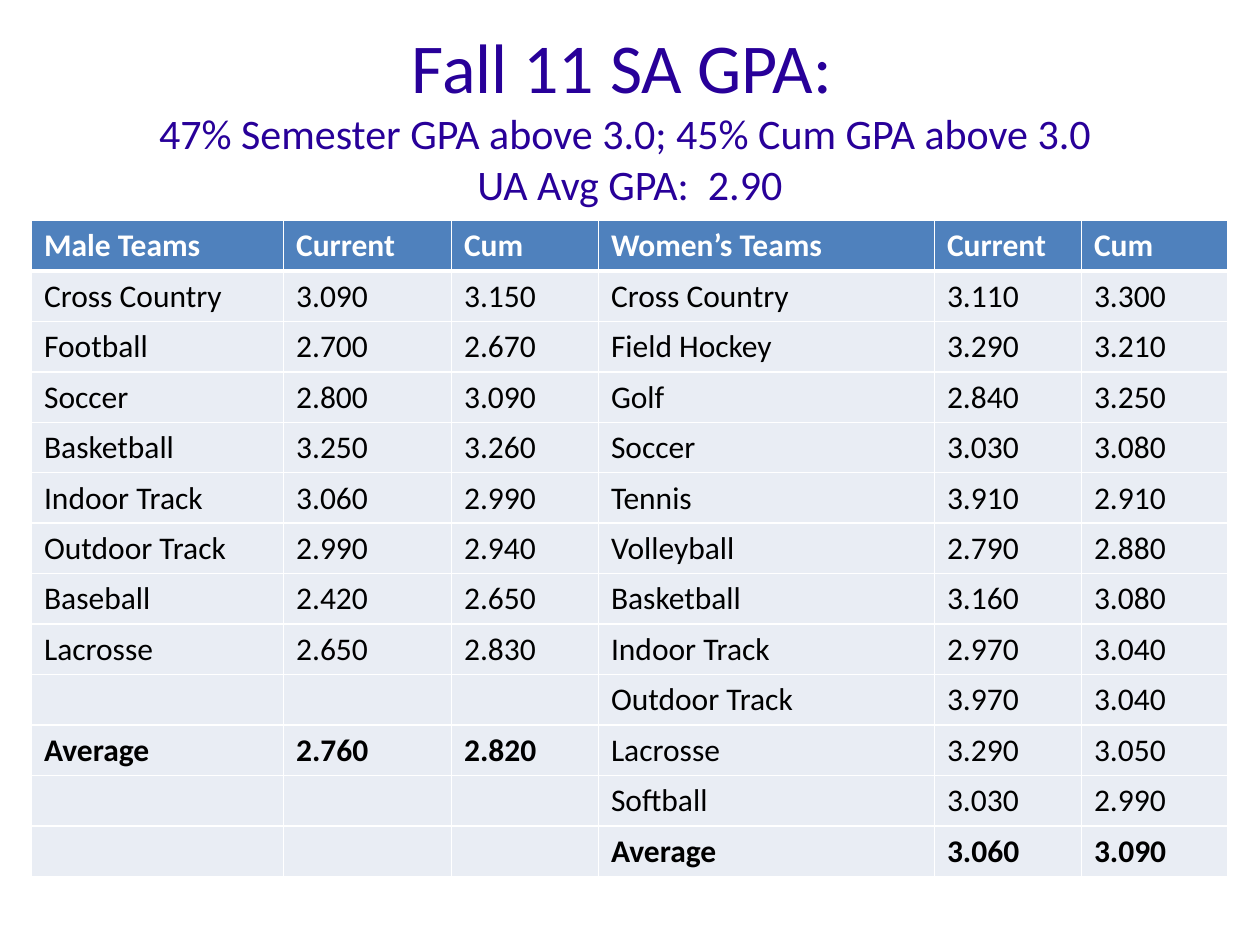
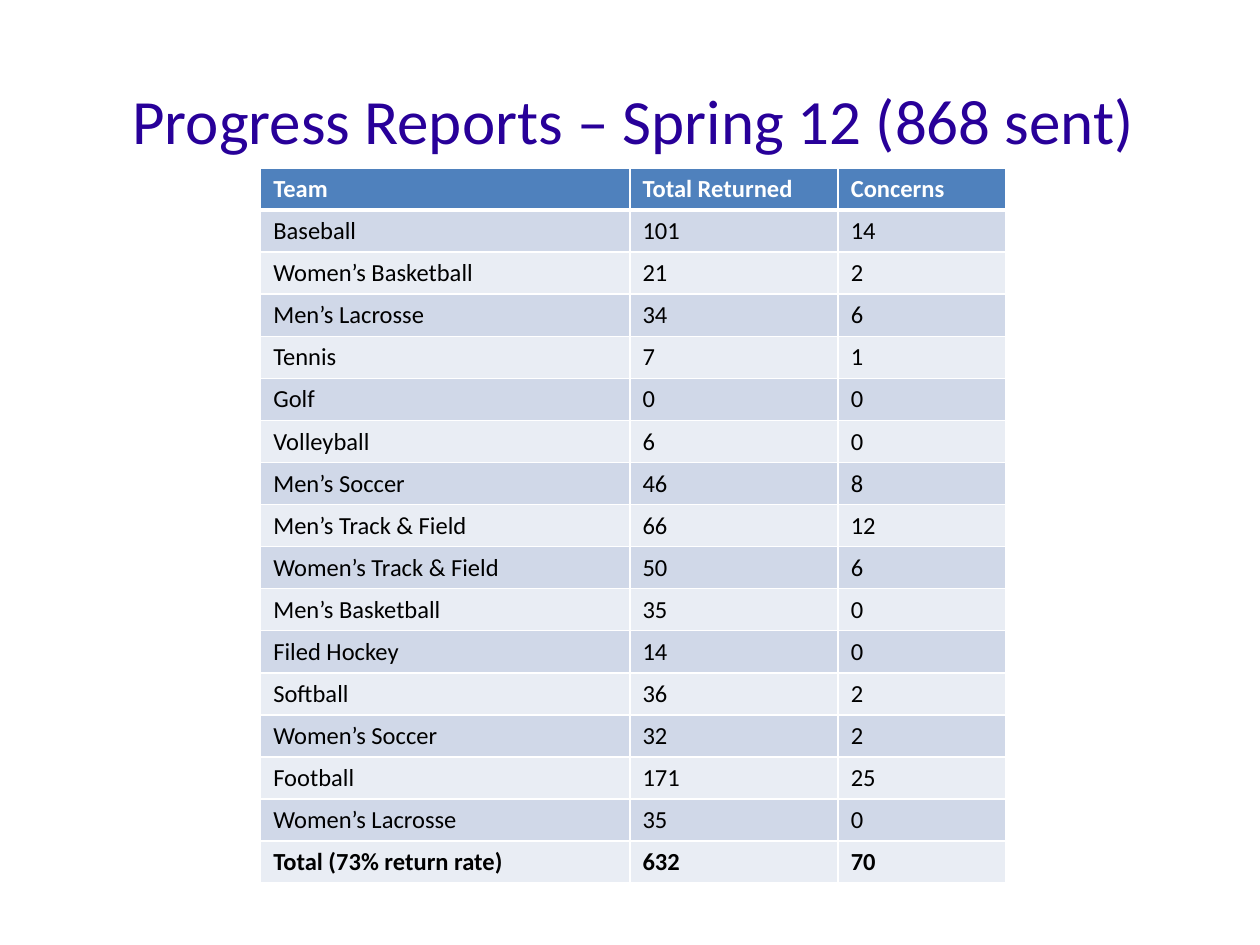
import dataclasses
import itertools
import typing

import lxml.etree
import pptx
import pptx.dml.color
import pptx.enum.text
import pptx.oxml.ns
import pptx.util

Pt = pptx.util.Pt
RGB = pptx.dml.color.RGBColor.from_string
qn = pptx.oxml.ns.qn


@dataclasses.dataclass(frozen=True)
class Theme:
    font: str = "Calibri"
    title: str = "280099"
    header: str = "4F81BD"
    header_text: str = "FFFFFF"
    light: str = "E9EDF4"
    dark: str = "D0D8E8"
    text: str = "000000"
    border: str = "FFFFFF"
    thin: float = 1
    thick: float = 3
    title_large: float = 40
    title_medium: float = 36
    subtitle: float = 24
    table_large: float = 18
    table_small: float = 14


THEME = Theme()


class Box(typing.NamedTuple):
    left: float
    top: float
    width: float
    height: float


class Line(typing.NamedTuple):
    text: str
    size: float


class Cell(typing.NamedTuple):
    text: str = ""
    bold: bool = False


@dataclasses.dataclass(frozen=True)
class TableSpec:
    left: float
    top: float
    widths: tuple[float, ...]
    row_height: float
    size: float
    header: tuple[str, ...]
    rows: list[list[Cell]]
    bands: tuple[str, ...]


# Data
MEN = [
    ("Cross Country", "3.090", "3.150"),
    ("Football", "2.700", "2.670"),
    ("Soccer", "2.800", "3.090"),
    ("Basketball", "3.250", "3.260"),
    ("Indoor Track", "3.060", "2.990"),
    ("Outdoor Track", "2.990", "2.940"),
    ("Baseball", "2.420", "2.650"),
    ("Lacrosse", "2.650", "2.830"),
    ("", "", ""),
    ("Average", "2.760", "2.820"),
]
WOMEN = [
    ("Cross Country", "3.110", "3.300"),
    ("Field Hockey", "3.290", "3.210"),
    ("Golf", "2.840", "3.250"),
    ("Soccer", "3.030", "3.080"),
    ("Tennis", "3.910", "2.910"),
    ("Volleyball", "2.790", "2.880"),
    ("Basketball", "3.160", "3.080"),
    ("Indoor Track", "2.970", "3.040"),
    ("Outdoor Track", "3.970", "3.040"),
    ("Lacrosse", "3.290", "3.050"),
    ("Softball", "3.030", "2.990"),
    ("Average", "3.060", "3.090"),
]
REPORTS = [
    ("Baseball", "101", "14"),
    ("Women’s Basketball", "21", "2"),
    ("Men’s Lacrosse", "34", "6"),
    ("Tennis", "7", "1"),
    ("Golf", "0", "0"),
    ("Volleyball", "6", "0"),
    ("Men’s Soccer", "46", "8"),
    ("Men’s Track & Field", "66", "12"),
    ("Women’s Track & Field", "50", "6"),
    ("Men’s Basketball", "35", "0"),
    ("Filed Hockey", "14", "0"),
    ("Softball", "36", "2"),
    ("Women’s Soccer", "32", "2"),
    ("Football", "171", "25"),
    ("Women’s Lacrosse", "35", "0"),
    ("Total (73% return rate)", "632", "70"),
]


def record_cells(record: tuple[str, ...]) -> list[Cell]:
    """Summary records are bold throughout."""
    bold = record[0].startswith(("Average", "Total"))
    return [Cell(text, bold) for text in record]


# Shared drawing
def style_run(r, size: float, color: str, bold: bool = False) -> None:
    r.font.name = THEME.font
    r.font.size = Pt(size)
    r.font.bold = bold
    r.font.color.rgb = RGB(color)


def add_title(s, box: Box, lines: list[Line]) -> None:
    tf = s.shapes.add_textbox(*map(Pt, box)).text_frame
    tf.word_wrap = True
    tf.vertical_anchor = pptx.enum.text.MSO_ANCHOR.MIDDLE
    tf.margin_left = tf.margin_right = tf.margin_top = tf.margin_bottom = 0
    p = tf.paragraphs[0]
    p.alignment = pptx.enum.text.PP_ALIGN.CENTER
    for i, line in enumerate(lines):
        if i:
            p.add_line_break()
        r = p.add_run()
        r.text = line.text
        style_run(r, line.size, THEME.title)


def set_borders(cell, top: float, bottom: float) -> None:
    tc_pr = cell._tc.get_or_add_tcPr()
    sides = {"lnL": THEME.thin, "lnR": THEME.thin, "lnT": top, "lnB": bottom}
    for side, width in sides.items():
        ln = lxml.etree.SubElement(tc_pr, qn(f"a:{side}"), w=str(Pt(width)))
        fill = lxml.etree.SubElement(ln, qn("a:solidFill"))
        lxml.etree.SubElement(fill, qn("a:srgbClr"), val=THEME.border)


def add_table(s, spec: TableSpec) -> None:
    rows = [[Cell(text, True) for text in spec.header]] + spec.rows
    table = s.shapes.add_table(
        len(rows), len(spec.widths), Pt(spec.left), Pt(spec.top),
        Pt(sum(spec.widths)), Pt(spec.row_height * len(rows))).table
    table.horz_banding = False
    for column, width in zip(table.columns, spec.widths):
        column.width = Pt(width)
    for i, row in enumerate(rows):
        table.rows[i].height = Pt(spec.row_height)
        fill = spec.bands[(i - 1) % len(spec.bands)] if i else THEME.header
        color = THEME.text if i else THEME.header_text
        top = THEME.thick if i == 1 else THEME.thin
        bottom = THEME.thin if i else THEME.thick
        for j, content in enumerate(row):
            cell = table.cell(i, j)
            set_borders(cell, top, bottom)
            cell.fill.solid()
            cell.fill.fore_color.rgb = RGB(fill)
            if content.text:
                r = cell.text_frame.paragraphs[0].add_run()
                r.text = content.text
                style_run(r, spec.size, color, content.bold)


# Slides
def add_gpa_slide(s) -> None:
    add_title(s, Box(36, 18, 648, 97), [
        Line("Fall 11 SA GPA: ", THEME.title_large),
        Line("47% Semester GPA above 3.0; 45% Cum GPA above 3.0 ", THEME.subtitle),
        Line("UA Avg GPA:  2.90", THEME.subtitle),
    ])
    pairs = itertools.zip_longest(MEN, WOMEN, fillvalue=("", "", ""))
    add_table(s, TableSpec(
        left=18, top=126, widths=(144, 96, 84, 192, 84, 83.5),
        row_height=28.8, size=THEME.table_large,
        header=("Male Teams", "Current", "Cum", "Women’s Teams", "Current", "Cum"),
        rows=[record_cells(man) + record_cells(woman) for man, woman in pairs],
        bands=(THEME.light,)))


def add_reports_slide(s) -> None:
    add_title(s, Box(38, 16.5, 648, 103), [
        Line("Progress Reports – Spring 12 (868 sent)", THEME.title_medium),
    ])
    add_table(s, TableSpec(
        left=149, top=96, widths=(211, 119, 96),
        row_height=24, size=THEME.table_small,
        header=("Team", "Total Returned", "Concerns"),
        rows=[record_cells(report) for report in REPORTS],
        bands=(THEME.dark, THEME.light)))


def main() -> None:
    prs = pptx.Presentation()
    prs.slide_width, prs.slide_height = Pt(720), Pt(540)
    for draw in (add_gpa_slide, add_reports_slide):
        draw(prs.slides.add_slide(prs.slide_layouts[6]))
    prs.save("out.pptx")


if __name__ == "__main__":
    main()
